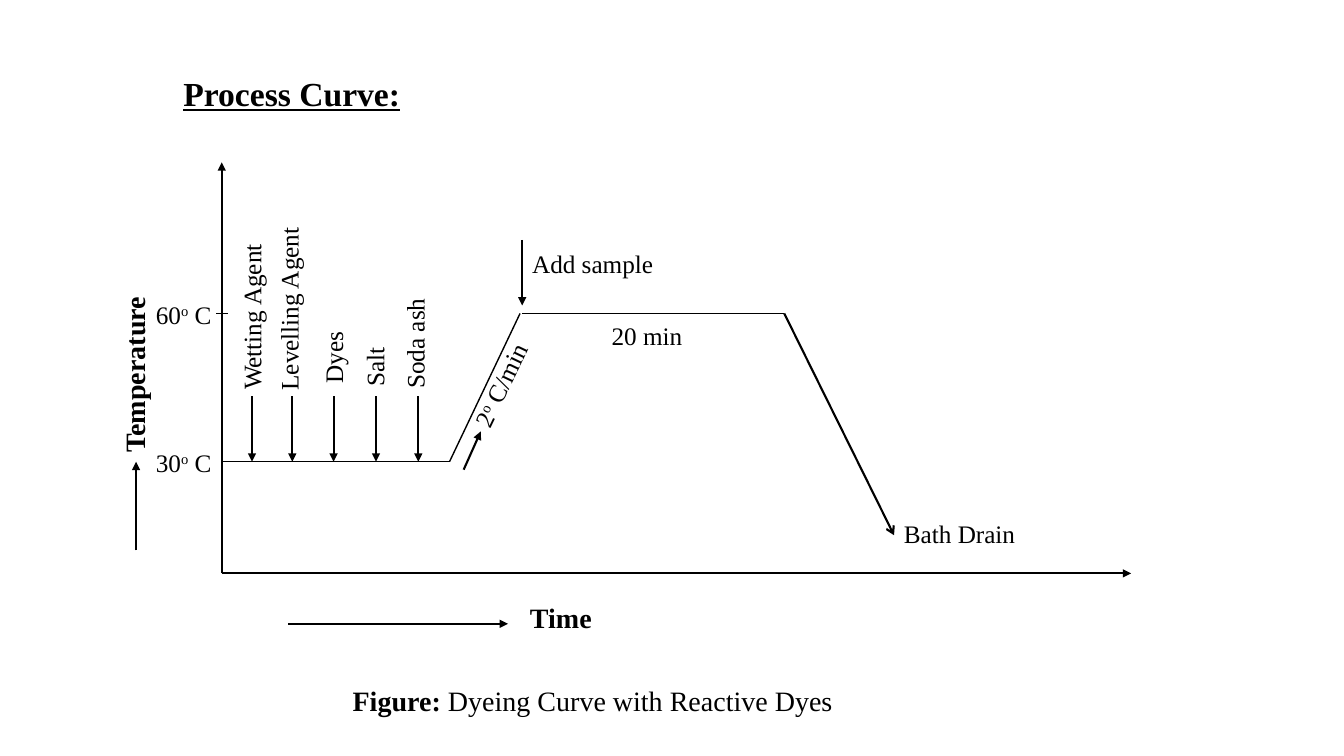
from lxml.etree import SubElement as Sub
from pptx import Presentation
from pptx.dml.color import RGBColor
from pptx.enum.shapes import MSO_CONNECTOR as Link
from pptx.enum.text import MSO_ANCHOR as Anchor, MSO_AUTO_SIZE as Fit, PP_ALIGN as Align
from pptx.oxml.ns import qn
from pptx.util import Pt

FACE = "Times New Roman"
INK = "000000"


def color(code):
    return RGBColor.from_string(code)


def style(run, size, bold=False):
    font = run.font
    font.name, font.size, font.bold = FACE, Pt(size), bold
    font.color.rgb = color(INK)


def line(slide, start, end, width=1.5, head="triangle"):
    link = slide.shapes.add_connector(
        Link.STRAIGHT, *[Pt(n) for n in (*start, *end)])
    link.line.color.rgb = color(INK)
    link.line.width = Pt(width)
    props = link._element.spPr
    if head:
        Sub(props.find(qn("a:ln")), qn("a:tailEnd"), type=head)
    Sub(props, qn("a:effectLst"))


def label(slide, words, left, top, width, size=18, bold=False, turn=0):
    height = 31.5 if size == 20 else 29
    box = slide.shapes.add_textbox(Pt(left), Pt(top), Pt(width), Pt(height))
    box.rotation = turn
    frame = box.text_frame
    frame.word_wrap = True
    frame.auto_size = Fit.SHAPE_TO_FIT_TEXT
    para = frame.paragraphs[0]
    for spot, part in enumerate(words.split("^")):
        run = para.add_run()
        run.text = part
        style(run, size, bold)
        if spot % 2:
            run._r.get_or_add_rPr().set("baseline", "30000")
    return para


def heading(slide, left, top, width, height):
    title = slide.shapes.title
    title.left, title.top = Pt(left), Pt(top)
    title.width, title.height = Pt(width), Pt(height)
    frame = title.text_frame
    frame.text = "Process Curve:"
    frame.word_wrap = True
    frame.auto_size = Fit.NONE
    frame.vertical_anchor = Anchor.TOP
    para = frame.paragraphs[0]
    para.alignment = Align.LEFT
    para.line_spacing = 1
    para.space_before = Pt(0)
    style(para.runs[0], 24, True)
    para.runs[0].font.underline = True


def axes(slide, left, top, width, height, low, high):
    base = top + height
    line(slide, (left, base), (left + width, base))
    line(slide, (left, base), (left, top))
    line(slide, (left + 4.3, high), (left - 4.3, high), 1, None)
    line(slide, (left - 61.2, base - 16.5), (left - 61.2, low))
    line(slide, (left + 47.5, base + 36), (left + 204.5, base + 36))
    for mark, level in ((" 60^o^ C", high), (" 30^o^ C", low)):
        label(slide, mark, left - 58.6, level - 14, 59.8)
    label(slide, "Temperature", left - 138.2, top + 123, 151.2, 20, True, 270)
    label(slide, "Time", left + 213.1, base + 15.9, 129.6, 20, True)


def doses(slide, left, top, low):
    items = (
        (" Wetting Agent", 21.6, 21.2, 173.8, 140.4),
        (" Levelling Agent", 50.4, 47.9, 174.5, 140.4),
        ("Dyes", 79.9, 79.6, 165.2, 74.2),
        ("Salt", 110.2, 109.1, 167.3, 56.9),
        ("Soda ash", 140.4, 137.9, 168.7, 105.8),
    )
    for name, drop, mid, foot, width in items:
        line(slide, (left + drop, top + 167), (left + drop, low))
        label(slide, name, left + mid - width / 2,
              top + foot - width / 2 - 14.5, width, turn=270)


def curve(slide, left, top, low, high):
    ramp, peak, fall = left + 162.7, left + 214.6, left + 401.8
    drain = left + 480.2, top + 266.3
    line(slide, (left, low), (ramp, low), 1, None)
    line(slide, (ramp, low), (peak - 1.5, high), 1, None)
    line(slide, (peak, high), (fall, high), 1, None)
    line(slide, (fall, high), drain, 1.5, "arrow")
    line(slide, (peak, high - 52.5), (peak, high - 5.7))
    line(slide, (ramp + 10.1, low + 5.7), (ramp + 22.3, low - 21.6))
    label(slide, "Add sample", peak, high - 50.4, 103)
    label(slide, "20 min", peak + 56.8, high + 1.5, 72)
    label(slide, "2^o^ C/min", ramp - 2.9, high + 36, 79.2, turn=295.6)
    label(slide, "Bath Drain", drain[0], drain[1] - 15.8, 140.4)


def plot(slide, left, top, width, height):
    low, high = top + 213.8, top + 107.9
    axes(slide, left, top, width, height, low, high)
    doses(slide, left, top, low)
    curve(slide, left, top, low, high)


def caption(slide, left, top, width):
    para = label(slide, "Figure: ", left, top, width, 20, True)
    run = para.add_run()
    run.text = "Dyeing Curve with Reactive Dyes"
    style(run, 20)


def main():
    deck = Presentation()
    deck.slide_width, deck.slide_height = Pt(960), Pt(540)
    slide = deck.slides.add_slide(deck.slide_layouts[5])
    heading(slide, 123.8, 48.2, 188.6, 36)
    plot(slide, 158.4, 116, 649.6, 293.6)
    caption(slide, 244.8, 484.6, 363.6)
    deck.save("out.pptx")


if __name__ == "__main__":
    main()
